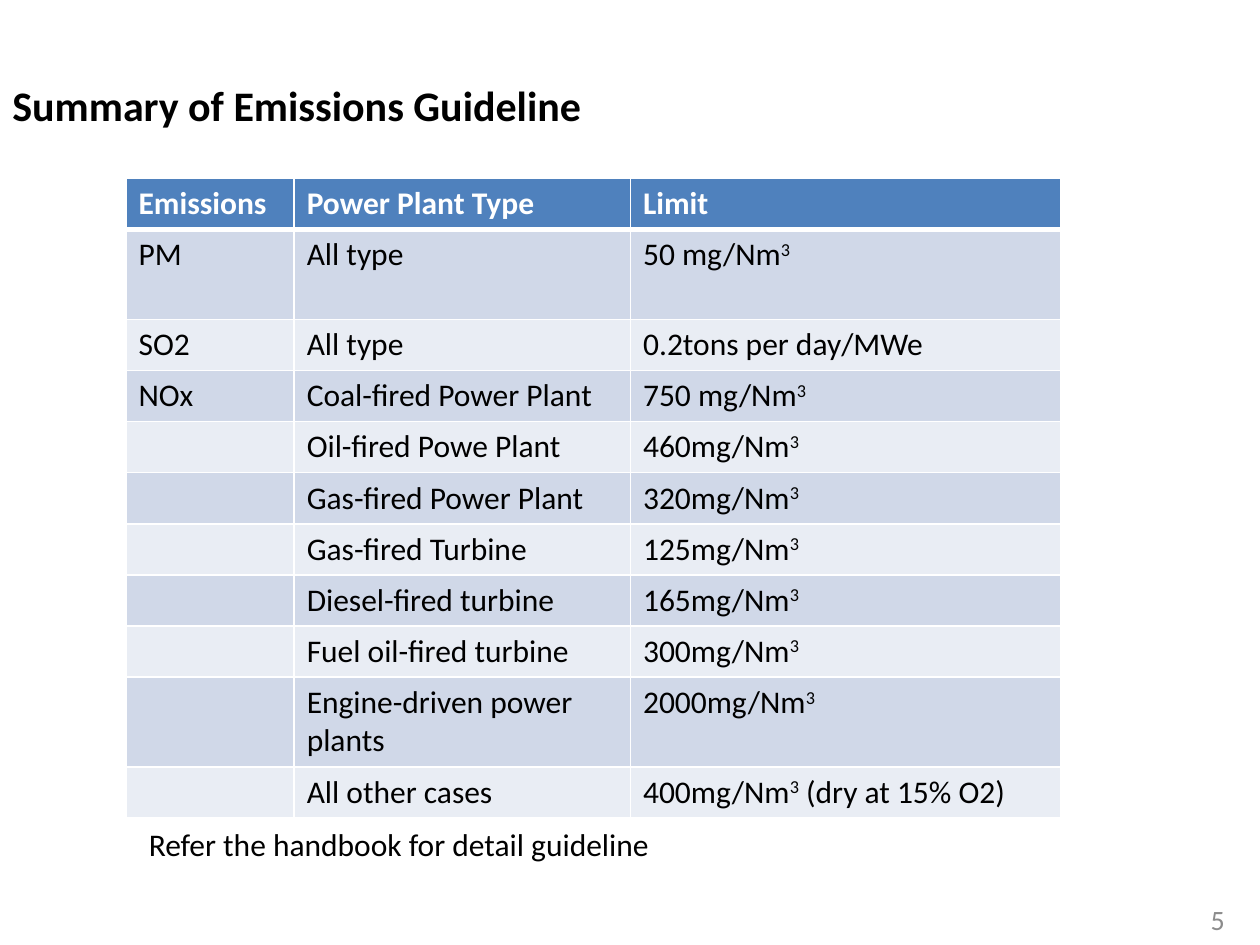
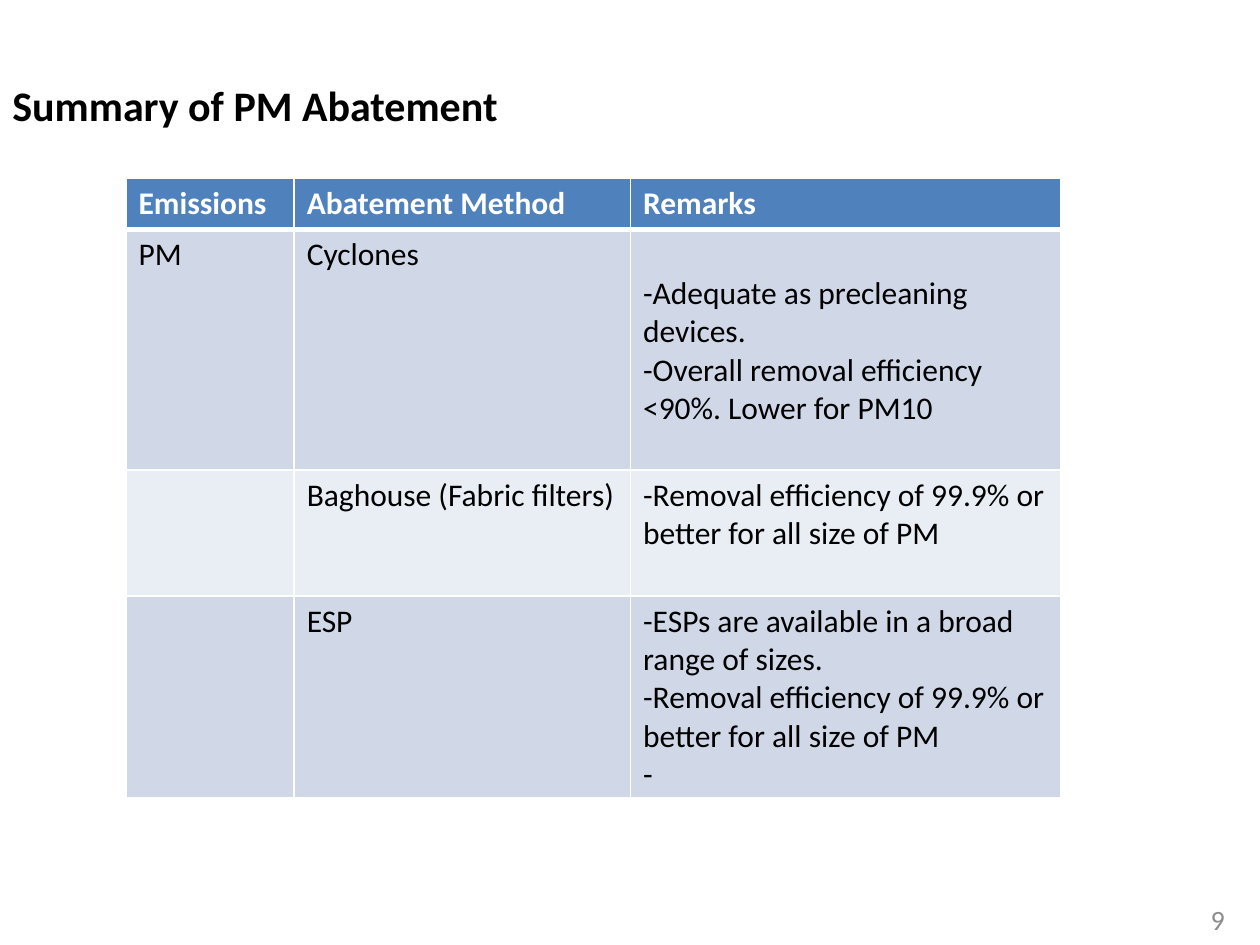
"""Build two table slides on power plant emissions."""
from lxml import etree
from pptx import Presentation, util as u
from pptx.dml.color import RGBColor
from pptx.enum import text as t
from pptx.oxml.ns import qn

FONT = "Calibri"
HUES = {"head": "4F81BD", "odd": "D0D8E8", "even": "E9EDF4",
        "white": "FFFFFF", "black": "000000", "gray": "8C8C8C"}
COLS = (3.39, 6.78, 8.68)
ROW, TALL = 1.03, 1.81

PAGES = [
    {"title": "Summary of Emissions Guideline", "page": "5",
     "note": "Refer the handbook for detail guideline",
     "rows": [
         (ROW, "Emissions", "Power Plant Type", "Limit"),
         (TALL, "PM", "All type", "50 mg/Nm^3^"),
         (ROW, "SO2", "All type", "0.2tons per day/MWe"),
         (ROW, "NOx", "Coal-fired Power Plant", "750 mg/Nm^3^"),
         (ROW, "", "Oil-fired Powe Plant", "460mg/Nm^3^"),
         (ROW, "", "Gas-fired Power Plant", "320mg/Nm^3^"),
         (ROW, "", "Gas-fired Turbine", "125mg/Nm^3^"),
         (ROW, "", "Diesel-fired turbine", "165mg/Nm^3^"),
         (ROW, "", "Fuel oil-fired turbine", "300mg/Nm^3^"),
         (TALL, "", "Engine-driven power plants", "2000mg/Nm^3^"),
         (ROW, "", "All other cases", "400mg/Nm^3^ (dry at 15% O2)")]},
    {"title": "Summary of PM Abatement", "page": "9", "drop": (1, 2),
     "rows": [
         (ROW, "Emissions", "Abatement Method", "Remarks"),
         (4.84, "PM", "Cyclones",
          "-Adequate as precleaning devices.\n"
          "-Overall removal efficiency <90%. Lower for PM10"),
         (2.54, "", "Baghouse (Fabric filters)",
          "-Removal efficiency of 99.9% or better for all size of PM"),
         (4.05, "", "ESP",
          "-ESPs are available in a broad range of sizes.\n"
          "-Removal efficiency of 99.9% or better for all size of PM\n-")]},
]


def style(para, size, hue, bold=False):
    font = para.font
    font.name, font.size, font.bold = FONT, u.Pt(size), bold
    font.color.rgb = RGBColor.from_string(HUES[hue])


def label(slide, words, box, size, hue="black", bold=False):
    frame = slide.shapes.add_textbox(*map(u.Cm, box)).text_frame
    frame.word_wrap = True
    para = frame.paragraphs[0]
    para.text = words
    style(para, size, hue, bold)
    return frame


def write(cell, words, hue, bold):
    """Fill a cell; text between carets is raised."""
    frame = cell.text_frame
    for i, line in enumerate(words.split("\n")):
        para = frame.add_paragraph() if i else frame.paragraphs[0]
        style(para, 18, hue, bold)
        for j, part in enumerate(line.split("^")):
            if part:
                run = para.add_run()
                run.text = part
                if j % 2:
                    run._r.get_or_add_rPr().set("baseline", "30000")


def edge(cell, row):
    props = cell._tc.get_or_add_tcPr()
    thick = {"lnT": row == 1, "lnB": row == 0}
    for side in ("lnL", "lnR", "lnT", "lnB"):
        width = u.Pt(3 if thick.get(side) else 1)
        line = etree.SubElement(props, qn("a:" + side), w=str(width))
        fill = etree.SubElement(line, qn("a:solidFill"))
        etree.SubElement(fill, qn("a:srgbClr"), val=HUES["white"])


def grid(slide, rows, drop=None):
    high = sum(row[0] for row in rows)
    box = map(u.Cm, (2.54, 3.6, sum(COLS), high))
    table = slide.shapes.add_table(len(rows), len(COLS), *box).table
    for col, width in zip(table.columns, COLS):
        col.width = u.Cm(width)
    for r, (tall, *words) in enumerate(rows):
        table.rows[r].height = u.Cm(tall)
        band = "head" if r == 0 else "odd" if r % 2 else "even"
        for c, word in enumerate(words):
            cell = table.cell(r, c)
            edge(cell, r)
            cell.fill.solid()
            cell.fill.fore_color.rgb = RGBColor.from_string(HUES[band])
            write(cell, word, "black" if r else "white", r == 0)
    if drop:
        table.cell(*drop).margin_top = u.Cm(0.9)


def main():
    deck = Presentation()
    deck.slide_width, deck.slide_height = u.Cm(25.4), u.Cm(19.05)
    for page in PAGES:
        slide = deck.slides.add_slide(deck.slide_layouts[6])
        foot = label(slide, page["page"], (23.7, 18.03, 1.7, 1.02), 16, "gray")
        foot.vertical_anchor = t.MSO_ANCHOR.MIDDLE
        foot.paragraphs[0].alignment = t.PP_ALIGN.CENTER
        grid(slide, page["rows"], page.get("drop"))
        if "note" in page:
            label(slide, page["note"], (2.75, 16.51, 12.07, 1.03), 18)
        label(slide, page["title"], (0, 1.48, 12.07, 1.28), 24, bold=True)
    deck.save("out.pptx")


if __name__ == "__main__":
    main()
